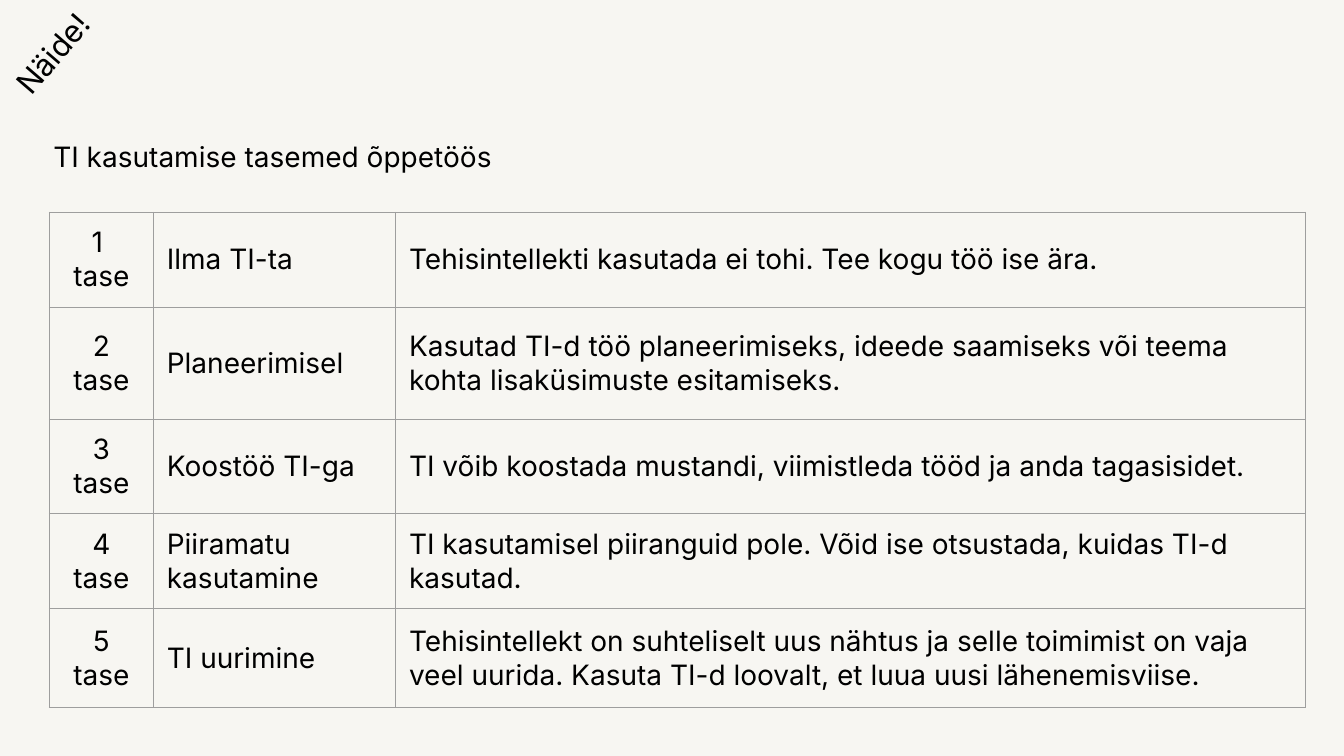
from lxml.etree import SubElement
from pptx import Presentation
from pptx.dml.color import RGBColor
from pptx.enum.text import MSO_ANCHOR as Anchor, PP_ALIGN as Align
from pptx.oxml.ns import qn
from pptx.util import Pt

COLORS = {"background": "F7F6F2", "text": "000000", "border": "9E9E9E"}

COLUMN_WIDTHS = [74.4, 173, 650]
ROW_HEIGHTS = [60.5, 80, 67, 59, 70.6]
LEVELS = [
    ("1 \ntase", "Ilma TI-ta",
     "Tehisintellekti kasutada ei tohi. Tee kogu töö ise ära."),
    ("2 tase", "Planeerimisel",
     "Kasutad TI-d töö planeerimiseks, ideede saamiseks või teema kohta lisaküsimuste esitamiseks."),
    ("3 tase", "Koostöö TI-ga",
     "TI võib koostada mustandi, viimistleda tööd ja anda tagasisidet."),
    ("4 tase", "Piiramatu kasutamine",
     "TI kasutamisel piiranguid pole. Võid ise otsustada, kuidas TI-d kasutad."),
    ("5 tase", "TI uurimine",
     "Tehisintellekt on suhteliselt uus nähtus ja selle toimimist on vaja veel uurida. "
     "Kasuta TI-d loovalt, et luua uusi lähenemisviise."),
]


class SlideBuilder:
    font_name = "Inter"
    cell_margin = 9.6
    border_width = 0.75

    def __init__(self, slide):
        self.slide = slide

    def background(self, color):
        fill = self.slide.background.fill
        fill.solid()
        fill.fore_color.rgb = RGBColor.from_string(COLORS[color])

    def set_text(self, frame, text, size, align=Align.LEFT, spacing=None):
        frame.text = text
        for paragraph in frame.paragraphs:
            paragraph.alignment = align
            paragraph.line_spacing = spacing
            paragraph.font.name = self.font_name
            paragraph.font.size = Pt(size)
            paragraph.font.color.rgb = RGBColor.from_string(COLORS["text"])

    def text(self, box, text, size, margins, anchor=Anchor.TOP, spacing=None, rotation=0):
        shape = self.slide.shapes.add_textbox(*map(Pt, box))
        shape.rotation = rotation
        frame = shape.text_frame
        frame.word_wrap = True
        frame.vertical_anchor = anchor
        frame.margin_left = frame.margin_right = Pt(margins[0])
        frame.margin_top = frame.margin_bottom = Pt(margins[1])
        self.set_text(frame, text, size, spacing=spacing)

    def border(self, cell):
        properties = cell._tc.get_or_add_tcPr()
        for side in ("a:lnL", "a:lnR", "a:lnT", "a:lnB"):
            line = SubElement(properties, qn(side), w=str(Pt(self.border_width)))
            fill = SubElement(line, qn("a:solidFill"))
            SubElement(fill, qn("a:srgbClr"), val=COLORS["border"])

    def table(self, left, top, widths, heights, rows, size):
        frame = self.slide.shapes.add_table(
            len(rows), len(widths), Pt(left), Pt(top), Pt(sum(widths)), Pt(sum(heights)))
        table = frame.table
        table.first_row = table.horz_banding = False
        for column, width in zip(table.columns, widths):
            column.width = Pt(width)
        for row, height, texts in zip(table.rows, heights, rows):
            row.height = Pt(height)
            for index, (cell, text) in enumerate(zip(row.cells, texts)):
                cell.margin_left = cell.margin_right = Pt(self.cell_margin)
                cell.margin_top = cell.margin_bottom = Pt(self.cell_margin)
                cell.vertical_anchor = Anchor.MIDDLE
                self.border(cell)
                cell.fill.background()
                self.set_text(cell.text_frame, text, size, Align.LEFT if index else Align.CENTER)


def main():
    presentation = Presentation()
    presentation.slide_width = Pt(960)
    presentation.slide_height = Pt(540)
    builder = SlideBuilder(presentation.slides.add_slide(presentation.slide_layouts[6]))
    builder.background("background")
    builder.table(35.2, 151.6, COLUMN_WIDTHS, ROW_HEIGHTS, LEVELS, size=20)
    builder.text((31, 79.2, 815.8, 48.2), "TI kasutamise tasemed õppetöös", 20,
                 margins=(7.2, 3.6), anchor=Anchor.BOTTOM, spacing=0.8)
    builder.text((-4.3, 15.1, 87.8, 41), "Näide!", 22, margins=(7.2, 7.2), rotation=310.7)
    presentation.save("out.pptx")


if __name__ == "__main__":
    main()
